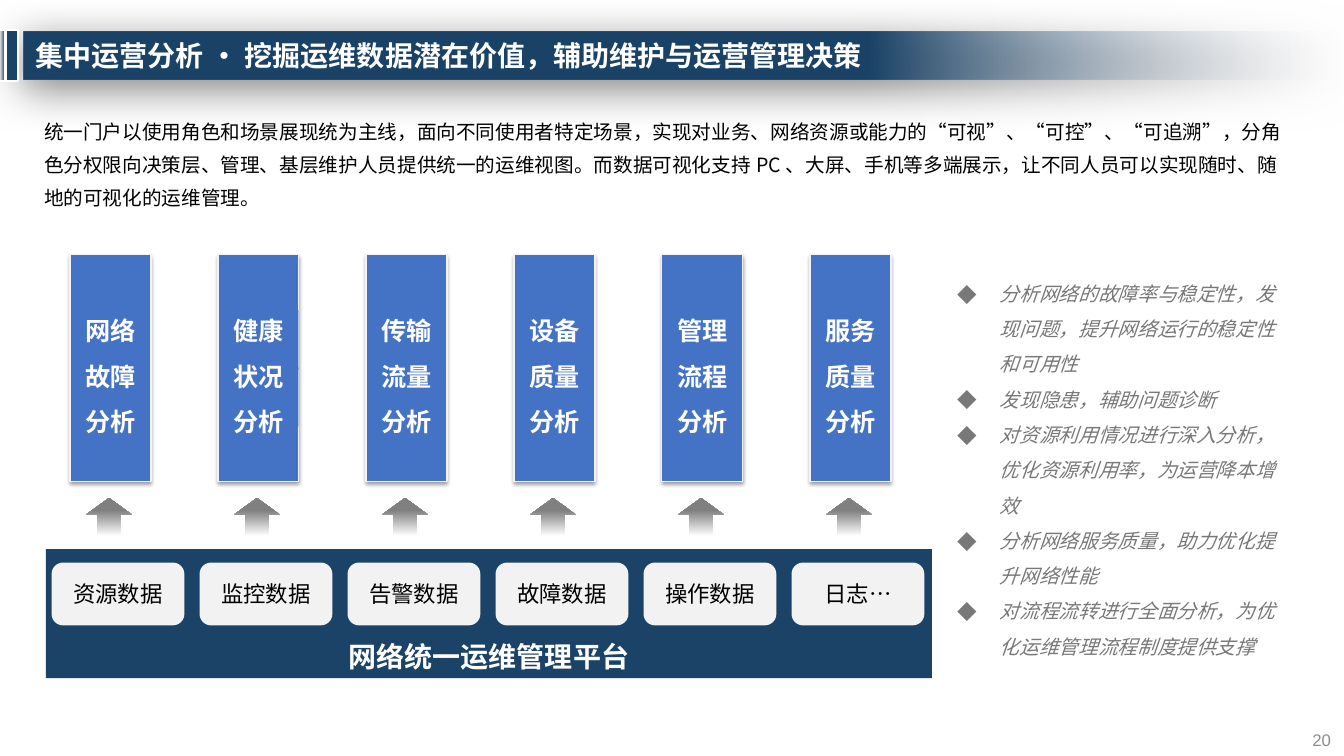
from lxml.etree import SubElement, Element
from pptx import Presentation
from pptx.dml.color import RGBColor
from pptx.enum.shapes import MSO_SHAPE
from pptx.enum.text import MSO_ANCHOR, PP_ALIGN
from pptx.oxml.ns import qn
from pptx.util import Pt

HEADING = "集中运营分析·挖掘运维数据潜在价值，辅助维护与运营管理决策"
INTRO = ("统一门户以使用角色和场景展现统为主线，面向不同使用者特定场景，实现对业务、"
         "网络资源或能力的“可视”、“可控”、“可追溯”，分角色分权限向决策层、管理、"
         "基层维护人员提供统一的运维视图。而数据可视化支持PC、大屏、手机等多端展示，"
         "让不同人员可以实现随时、随地的可视化的运维管理。")
# analysis pillar, data source feeding it
COLUMNS = [
    ("网络故障分析", "资源数据"),
    ("健康状况分析", "监控数据"),
    ("传输流量分析", "告警数据"),
    ("设备质量分析", "故障数据"),
    ("管理流程分析", "操作数据"),
    ("服务质量分析", "日志…"),
]
PLATFORM = "网络统一运维管理平台"
BENEFITS = [
    "分析网络的故障率与稳定性，发现问题，提升网络运行的稳定性和可用性",
    "发现隐患，辅助问题诊断",
    "对资源利用情况进行深入分析，优化资源利用率，为运营降本增效",
    "分析网络服务质量，助力优化提升网络性能",
    "对流程流转进行全面分析，为优化运维管理流程制度提供支撑",
]
PAGE = "20"

CJK, LATIN = "Noto Sans CJK SC", "Arial"
WHITE = RGBColor(0xFF, 0xFF, 0xFF)
BLACK = RGBColor(0, 0, 0)
NAVY = RGBColor(0x1B, 0x43, 0x67)
BLUE = RGBColor(0x44, 0x72, 0xC4)
SLATE = RGBColor(0x44, 0x54, 0x6A)
PALE = RGBColor(0xF2, 0xF2, 0xF2)
MIST = RGBColor(0xF6, 0xF8, 0xFC)
GREY = RGBColor(0x80, 0x80, 0x80)
NOTE_GREY = RGBColor(0x78, 0x78, 0x78)
PAGE_GREY = RGBColor(0x8C, 0x8C, 0x8C)

PITCH = 148  # distance from one column to the next


def px(length):
    return round(length * 914400 / 100.8)


def add_color(parent, color, alpha=100):
    node = SubElement(parent, qn("a:srgbClr"), val=str(color))
    if alpha < 100:
        SubElement(node, qn("a:alpha"), val=str(alpha * 1000))


def set_gradient(shape, stops):
    """Fill left to right with stops of (percent, colour, alpha)."""
    shape.fill.background()
    gradient = Element(qn("a:gradFill"), rotWithShape="1")
    stop_list = SubElement(gradient, qn("a:gsLst"))
    for percent, color, alpha in stops:
        add_color(SubElement(stop_list, qn("a:gs"), pos=str(percent * 1000)), color, alpha)
    SubElement(gradient, qn("a:lin"), ang="0", scaled="0")
    properties = shape.element.spPr
    properties.replace(properties.find(qn("a:noFill")), gradient)


def add_shadow(shape, alpha, blur, distance, angle):
    effects = shape.element.spPr.find(qn("a:effectLst"))
    shadow = SubElement(effects, qn("a:outerShdw"), blurRad=str(Pt(blur)),
                        dist=str(Pt(distance)), dir=str(angle * 60000),
                        algn="ctr", rotWithShape="0")
    add_color(shadow, BLACK, alpha)


def add_block(kind, box, fill, line=None, width=1, adjust=()):
    block = slide.shapes.add_shape(kind, *map(px, box))
    block.shadow.inherit = False
    for index, value in enumerate(adjust):
        block.adjustments[index] = value
    if isinstance(fill, list):
        set_gradient(block, fill)
    else:
        block.fill.solid()
        block.fill.fore_color.rgb = fill
    if line is None:
        block.line.fill.background()
    else:
        block.line.color.rgb = line
        block.line.width = Pt(width)
    return block


def write(shape, lines, size, color, anchor=MSO_ANCHOR.MIDDLE, align=PP_ALIGN.LEFT,
          spacing=1.0, face=CJK, insets=(10, 5), bullet=None, **style):
    frame = shape.text_frame
    across, down = map(px, insets)
    layout = dict(word_wrap=True, vertical_anchor=anchor, margin_left=across,
                  margin_right=across, margin_top=down, margin_bottom=down)
    for name, value in layout.items():
        setattr(frame, name, value)
    frame.text = "\n".join(lines)
    for paragraph in frame.paragraphs:
        paragraph.alignment = align
        paragraph.line_spacing = spacing
        if bullet:
            properties = paragraph._p.get_or_add_pPr()
            properties.set("marL", str(px(42)))
            properties.set("indent", str(px(-42)))
            SubElement(properties, qn("a:buFont"), typeface=CJK)
            SubElement(properties, qn("a:buChar"), char=bullet)
        for run in paragraph.runs:
            for name, value in dict(size=Pt(size), name=face, **style).items():
                setattr(run.font, name, value)
            run.font.color.rgb = color
            run_properties = run._r.get_or_add_rPr()
            run_properties.set("lang", "zh-CN")
            SubElement(run_properties, qn("a:ea"), typeface=face)


def add_text(box, lines, size, color, **options):
    write(slide.shapes.add_textbox(*map(px, box)), lines, size, color, **options)


deck = Presentation()
deck.slide_width, deck.slide_height = px(1344), px(756)
slide = deck.slides.add_slide(deck.slide_layouts[5])

# Heading band and its edge marks
band = add_block(MSO_SHAPE.RECTANGLE, (24, 32, 1321, 48),
                 [(0, NAVY, 100), (64, NAVY, 100), (100, MIST, 0)])
add_shadow(band, alpha=50, blur=31, distance=6, angle=97)
add_block(MSO_SHAPE.RECTANGLE, (6, 30, 12, 51), NAVY, WHITE)
edge = add_block(MSO_SHAPE.RECTANGLE, (-1, 30, 6, 51),
                 [(12, PALE, 100), (87, SLATE, 100)], WHITE)

heading = slide.shapes.title
edge.element.addnext(heading.element)
heading.left, heading.top, heading.width, heading.height = map(px, (25, 34, 1230, 46))
write(heading, [HEADING], 20, WHITE, spacing=0.9, bold=True)

add_text((34, 106, 1264, 110), [INTRO], 14, BLACK, anchor=MSO_ANCHOR.TOP, spacing=1.4)

# Platform with data sources, arrows and analysis pillars
platform = add_block(MSO_SHAPE.ROUNDED_RECTANGLE, (46, 549, 886, 129), NAVY, adjust=[0])
write(platform, [PLATFORM], 20, WHITE, anchor=MSO_ANCHOR.BOTTOM,
      align=PP_ALIGN.CENTER, bold=True)

for column, (analysis, source) in enumerate(COLUMNS):
    shift = column * PITCH
    chip = add_block(MSO_SHAPE.ROUNDED_RECTANGLE, (53 + shift, 564, 130, 60), PALE, PALE, 2)
    write(chip, [source], 16, BLACK, align=PP_ALIGN.CENTER)

    pillar = add_block(MSO_SHAPE.PENTAGON, (70 + shift, 255, 81, 227), BLUE, PALE, 0.75, [0])
    add_shadow(pillar, alpha=38, blur=3.1, distance=1.6, angle=90)
    write(pillar, [analysis], 18, WHITE, align=PP_ALIGN.CENTER, spacing=1.5,
          insets=(12, 5), bold=True)

    arrow = add_block(MSO_SHAPE.RIGHT_ARROW, (90 + shift, 494, 38, 46),
                      [(0, WHITE, 100), (68, GREY, 100)], adjust=[0.5, 0.44])
    arrow.rotation = 270

add_text((948, 265, 351, 398), BENEFITS, 14, NOTE_GREY, anchor=MSO_ANCHOR.TOP,
         spacing=1.5, bullet="◆", italic=True)
add_text((1275, 723, 69, 34), [PAGE], 12, PAGE_GREY, align=PP_ALIGN.RIGHT,
         face=LATIN, insets=(13, 7))

deck.save("out.pptx")
